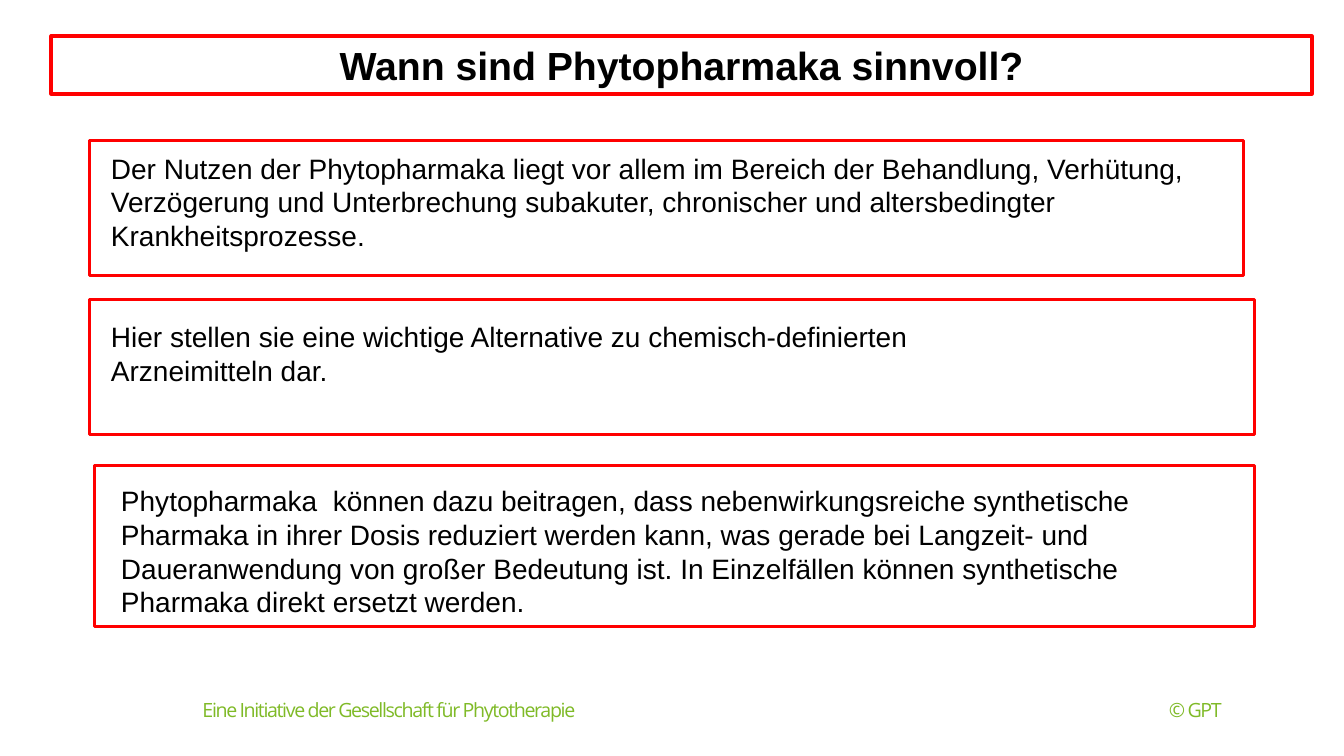
from lxml.etree import SubElement
from pptx import Presentation
from pptx.dml.color import RGBColor
from pptx.enum.shapes import MSO_SHAPE
from pptx.enum.text import MSO_ANCHOR, PP_ALIGN
from pptx.oxml.ns import qn
from pptx.util import Inches, Pt

COLORS = {"frame": "FF0000", "paper": "FFFFFF", "text": "000000", "footer": "7FBA27"}

TITLE = "Wann sind Phytopharmaka sinnvoll?"
STATEMENTS = [
    ((0.89, 1.39, 11.44, 1.34), (0.21, 0.11),
     "Der Nutzen der Phytopharmaka liegt vor allem im Bereich der Behandlung, Verhütung, "
     "Verzögerung und Unterbrechung subakuter, chronischer und altersbedingter "
     "Krankheitsprozesse."),
    ((0.89, 2.97, 11.55, 1.34), (0.21, 0.2),
     "Hier stellen sie eine wichtige Alternative zu chemisch-definierten \v"
     "Arzneimitteln dar."),
    ((0.94, 4.62, 11.5, 1.6), (0.26, 0.18),
     "Phytopharmaka  können dazu beitragen, dass nebenwirkungsreiche synthetische "
     "Pharmaka in ihrer Dosis reduziert werden kann, was gerade bei Langzeit- und "
     "Daueranwendung von großer Bedeutung ist. In Einzelfällen können synthetische "
     "Pharmaka direkt ersetzt werden."),
]
FOOTER = "Eine Initiative der Gesellschaft für Phytotherapie\t© GPT"


def color(name):
    """Return the named colour."""
    return RGBColor.from_string(COLORS[name])


def style_runs(paragraph, font_name, size, color_name, bold=False):
    """Give every run of the paragraph the same font."""
    for run in paragraph.runs:
        run.font.name = font_name
        run.font.size = Pt(size)
        run.font.bold = bold
        run.font.color.rgb = color(color_name)


def add_frame(slide, box, line_width, text):
    """Add a red-framed rectangle with text and return it."""
    shape = slide.shapes.add_shape(MSO_SHAPE.RECTANGLE, *map(Inches, box))
    shape.shadow.inherit = False
    shape.line.color.rgb = color("frame")
    shape.line.width = Pt(line_width)
    shape.text_frame.word_wrap = True
    shape.text_frame.text = text
    return shape


def add_title(slide, box):
    """Add the framed, centred title."""
    shape = add_frame(slide, box, 3, TITLE)
    shape.fill.background()
    paragraph = shape.text_frame.paragraphs[0]
    paragraph.alignment = PP_ALIGN.CENTER
    style_runs(paragraph, "Arial", 28, "text", bold=True)


def add_statement(slide, box, inset, text):
    """Add a framed statement whose text starts at the inset."""
    shape = add_frame(slide, box, 2.25, text)
    shape.fill.solid()
    shape.fill.fore_color.rgb = color("paper")
    text_frame = shape.text_frame
    text_frame.vertical_anchor = MSO_ANCHOR.TOP
    text_frame.margin_left, text_frame.margin_top = map(Inches, inset)
    text_frame.margin_right = Inches(0.3)
    text_frame.margin_bottom = 0
    paragraph = text_frame.paragraphs[0]
    paragraph.alignment = PP_ALIGN.LEFT
    style_runs(paragraph, "Arial", 20, "text")


def add_footer(slide, box):
    """Add the footer line with its right-aligned copyright."""
    text_frame = slide.shapes.add_textbox(*map(Inches, box)).text_frame
    text_frame.word_wrap = True
    text_frame.text = FOOTER
    paragraph = text_frame.paragraphs[0]
    tabs = SubElement(paragraph._p.get_or_add_pPr(), qn("a:tabLst"))
    SubElement(tabs, qn("a:tab"), pos=str(Inches(box[2] - 0.4)), algn="r")
    style_runs(paragraph, "Open Sans", 14, "footer")
    for run in paragraph.runs:
        run._r.get_or_add_rPr().set("spc", "-100")


def main():
    """Build and save the slide."""
    presentation = Presentation()
    presentation.slide_width = Inches(13.33)
    presentation.slide_height = Inches(7.5)
    slide = presentation.slides.add_slide(presentation.slide_layouts[6])
    add_footer(slide, (1.91, 6.87, 10.51, 0.46))
    add_title(slide, (0.51, 0.36, 12.5, 0.57))
    for box, inset, text in STATEMENTS:
        add_statement(slide, box, inset, text)
    presentation.save("out.pptx")


if __name__ == "__main__":
    main()
